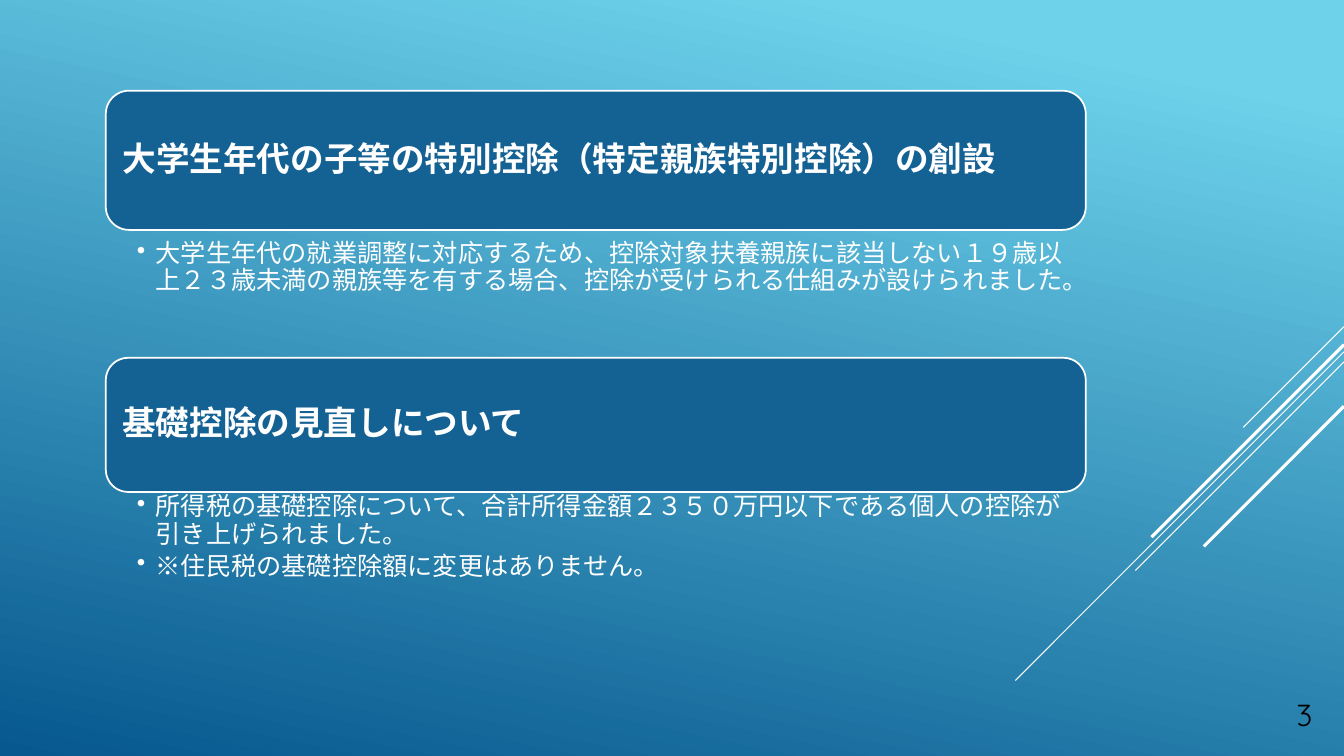
from lxml import etree
from pptx import Presentation
from pptx.dml.color import RGBColor
from pptx.enum.shapes import MSO_CONNECTOR, MSO_SHAPE
from pptx.enum.text import MSO_ANCHOR, PP_ALIGN
from pptx.oxml.ns import qn
from pptx.util import Pt

STRAIGHT = MSO_CONNECTOR.STRAIGHT
ROUNDED = MSO_SHAPE.ROUNDED_RECTANGLE
MIDDLE, TOP, BOTTOM = MSO_ANCHOR.MIDDLE, MSO_ANCHOR.TOP, MSO_ANCHOR.BOTTOM
LEFT, RIGHT = PP_ALIGN.LEFT, PP_ALIGN.RIGHT

WHITE = RGBColor(0xFF, 0xFF, 0xFF)
BLACK = RGBColor(0x00, 0x00, 0x00)
PANEL_BLUE = RGBColor(0x14, 0x61, 0x94)
SKY = RGBColor(0x6E, 0xD2, 0xEB)
DEEP_BLUE = RGBColor(0x06, 0x58, 0x8E)

FONT = "Quicksand"
SLIDE_W, SLIDE_H = 960, 540
BULLET_INDENT = 13.5

# Diagonals: start height on the right edge, horizontal run, line width
DIAGONALS = [
    (233.3, 72, 0.75),
    (251.3, 234.7, 0.75),
    (258.5, 149, 0.75),
    (246.2, 137.5, 2.25),
    (290.2, 100.1, 2.25),
]

# Sections: top, heading height, gap to body, body height, heading, bullets
SECTIONS = [
    (64.8, 99.4, 5.7, 85, "大学生年代の子等の特別控除（特定親族特別控除）の創設",
     ["大学生年代の就業調整に対応するため、控除対象扶養親族に該当しない１９歳以上２３歳未満の"
      "親族等を有する場合、控除が受けられる仕組みが設けられました。"]),
    (255.6, 95.8, -0.6, 141.8, "基礎控除の見直しについて",
     ["所得税の基礎控除について、合計所得金額２３５０万円以下である個人の控除が引き上げられました。",
      "※住民税の基礎控除額に変更はありません。"]),
]


def set_frame(frame, anchor, left, top, right, bottom):
    frame.word_wrap = True
    frame.vertical_anchor = anchor
    frame.margin_left, frame.margin_top = Pt(left), Pt(top)
    frame.margin_right, frame.margin_bottom = Pt(right), Pt(bottom)


def write(paragraph, text, size, color, bold=False, align=LEFT):
    paragraph.alignment = align
    run = paragraph.add_run()
    run.text = text
    run.font.name = FONT
    run.font.size = Pt(size)
    run.font.bold = bold
    run.font.color.rgb = color


def add_bullet(paragraph):
    properties = paragraph._p.get_or_add_pPr()
    properties.set("marL", str(Pt(BULLET_INDENT)))
    properties.set("indent", str(-Pt(BULLET_INDENT)))
    etree.SubElement(properties, qn("a:buChar")).set("char", "•")


def paint_background(slide):
    fill = slide.background.fill
    fill.gradient()
    fill.gradient_angle = 258
    for stop, color, position in zip(fill.gradient_stops, (SKY, DEEP_BLUE), (0.1, 1)):
        stop.color.rgb = color
        stop.position = position


def draw_diagonals(slide, right):
    for top, run, width in DIAGONALS:
        diagonal = slide.shapes.add_connector(
            STRAIGHT, Pt(right), Pt(top), Pt(right - run), Pt(top + run))
        diagonal.line.color.rgb = WHITE
        diagonal.line.width = Pt(width)
        etree.SubElement(diagonal._element.spPr, qn("a:effectLst"))


def draw_section(slide, left, top, width, heading_height, gap, body_height, title, points):
    # Heading panel
    heading = slide.shapes.add_shape(
        ROUNDED, Pt(left), Pt(top), Pt(width), Pt(heading_height))
    heading.shadow.inherit = False
    heading.fill.solid()
    heading.fill.fore_color.rgb = PANEL_BLUE
    heading.line.color.rgb = WHITE
    heading.line.width = Pt(1.25)
    set_frame(heading.text_frame, MIDDLE, 7.2, 7.2, 7.2, 7.2)
    title_line = heading.text_frame.paragraphs[0]
    title_line.line_spacing = 0.9
    write(title_line, title, 24, WHITE, bold=True)

    # Bulleted body
    body = slide.shapes.add_textbox(
        Pt(left), Pt(top + heading_height + gap), Pt(width), Pt(body_height)).text_frame
    set_frame(body, TOP, 22.2, 2.2, 10, 2.2)
    for index, point in enumerate(points):
        paragraph = body.add_paragraph() if index else body.paragraphs[0]
        paragraph.line_spacing = 0.9
        paragraph.space_after = Pt(3.6)
        write(paragraph, point, 18, WHITE)
        add_bullet(paragraph)


def draw_page_number(slide, left, top, width, height):
    number = slide.shapes.add_textbox(Pt(left), Pt(top), Pt(width), Pt(height)).text_frame
    set_frame(number, BOTTOM, 7.2, 3.6, 7.2, 3.6)
    write(number.paragraphs[0], "3", 21.7, BLACK, align=RIGHT)


def main():
    deck = Presentation()
    deck.slide_width, deck.slide_height = Pt(SLIDE_W), Pt(SLIDE_H)
    slide = deck.slides.add_slide(deck.slide_layouts[6])
    paint_background(slide)
    draw_diagonals(slide, SLIDE_W)
    for top, *content in SECTIONS:
        draw_section(slide, 75.6, top, 700, *content)
    draw_page_number(slide, 890.6, 498.2, 54, 28.8)
    deck.save("out.pptx")


if __name__ == "__main__":
    main()
